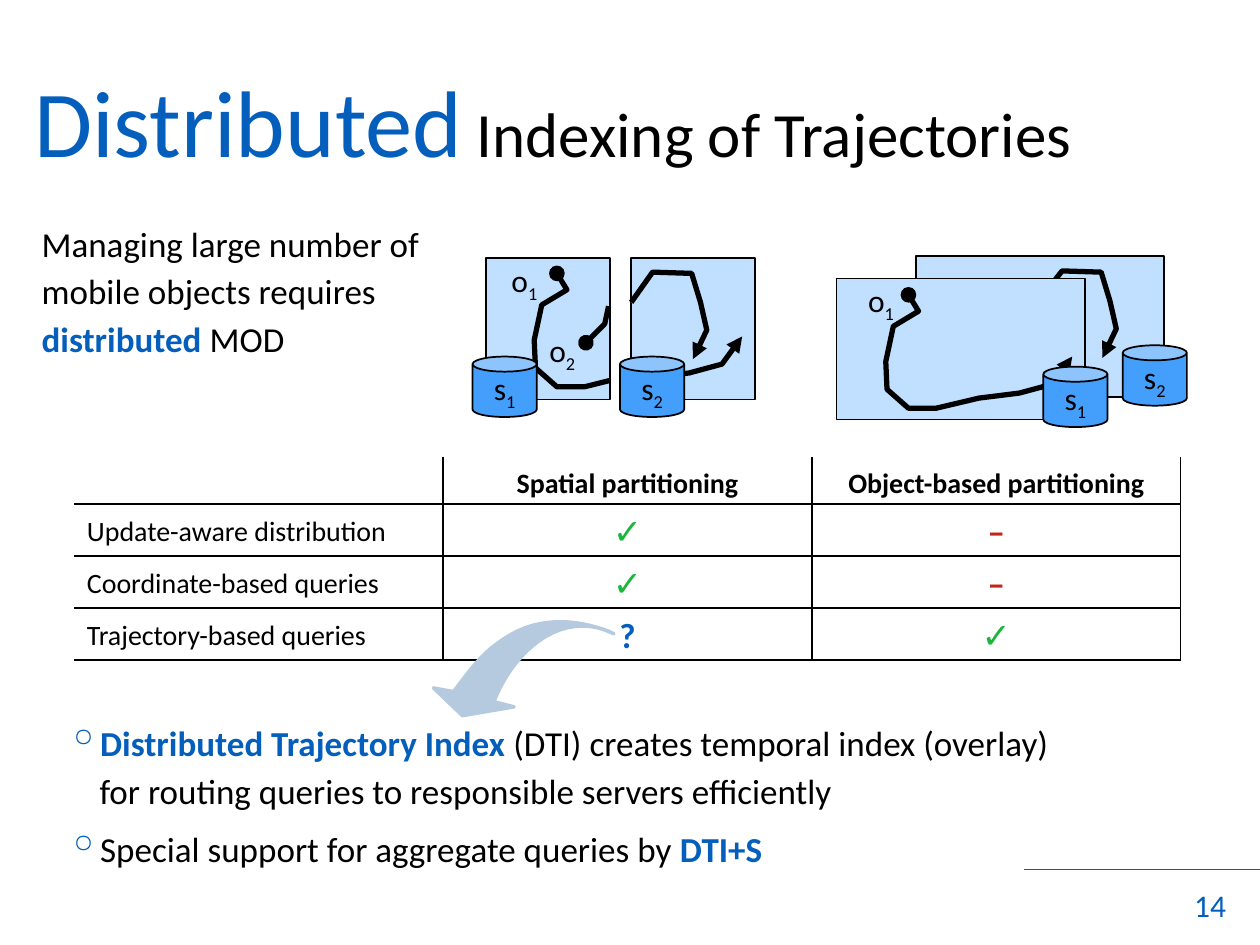
from dataclasses import dataclass

from lxml import etree
from pptx import Presentation
from pptx import util as u
from pptx.dml.color import RGBColor
from pptx.enum import shapes, text
from pptx.oxml import ns

# The slide is a grid of 100 columns by 75 rows; all lengths are in cells.
COLUMNS, ROWS = 100, 75
CELL = u.Inches(0.1)
FONT = "Calibri"
COLORS = {"accent": "045EBC", "ink": "000000", "area": "C1DFFE", "server": "449EFB",
          "yes": "1CB63D", "no": "C72418", "swoosh": "B5CADE"}
ALIGN, ANCHOR = text.PP_ALIGN, text.MSO_ANCHOR
Point = tuple[float, float]


@dataclass
class Span:
    words: str
    size: float = 20
    color: str = "ink"
    bold: bool = False
    subscript: bool = False


@dataclass
class Server:
    left: float
    top: float
    number: str


@dataclass
class Trajectory:
    points: list[Point]
    head: str = "none"
    tail: str = "none"


@dataclass
class Area:
    left: float
    top: float
    width: float
    trajectories: list[Trajectory]
    labels: list[tuple[float, float, str]]


def cells(*lengths: float) -> list[int]:
    return [round(length * CELL) for length in lengths]


def rgb(name: str) -> RGBColor:
    return RGBColor.from_string(COLORS[name])


def add_xml(parent, tag: str, **attributes: str):
    return etree.SubElement(parent, ns.qn(tag), attributes)


def write(frame, paragraphs: list[list[Span]], align=ALIGN.LEFT, anchor=ANCHOR.TOP,
          insets=(0, 0, 0, 0), wrap=True, spacing=1.0, before=0.0, margin=0.0, bullet="") -> None:
    """Fill a text frame; margin is in cells, insets are left, top, right, bottom."""
    frame.word_wrap, frame.vertical_anchor = wrap, anchor
    (frame.margin_left, frame.margin_top,
     frame.margin_right, frame.margin_bottom) = cells(*insets)
    for index, spans in enumerate(paragraphs):
        para = frame.add_paragraph() if index else frame.paragraphs[0]
        para.alignment, para.line_spacing, para.space_before = align, spacing, u.Pt(before)
        properties = para._p.get_or_add_pPr()
        properties.set("marL", str(cells(margin)[0]))
        if bullet:
            properties.set("indent", str(cells(-2.6)[0]))
            add_xml(add_xml(properties, "a:buClr"), "a:srgbClr", val=COLORS["accent"])
            add_xml(properties, "a:buSzPct", val="120000")
            add_xml(properties, "a:buChar", char=bullet)
        for span in spans:
            for line, words in enumerate(span.words.split("\n")):
                if line:
                    para.add_line_break()
                if not words:
                    continue
                run = para.add_run()
                run.text = words
                run.font.name, run.font.size, run.font.bold = FONT, u.Pt(span.size), span.bold
                run.font.color.rgb = rgb(span.color)
                if span.subscript:
                    run._r.get_or_add_rPr().set("baseline", "-25000")


def add_text(page, place: tuple, paragraphs: list[list[Span]], **style) -> None:
    write(page.shapes.add_textbox(*cells(*place)).text_frame, paragraphs, **style)


def paint(shape, fill: str, line: str = "", width: float = 1) -> None:
    shape.shadow.inherit = False
    shape.fill.solid()
    shape.fill.fore_color.rgb = rgb(fill)
    if line:
        shape.line.color.rgb, shape.line.width = rgb(line), u.Pt(width)
    else:
        shape.line.fill.background()


def indexed(letter: str, number: str) -> list[list[Span]]:
    return [[Span(letter, 18), Span(number, 18, subscript=True)]]


def add_outline(page, points: list[Point], close: bool):
    start, *rest = [cells(*point) for point in points]
    builder = page.shapes.build_freeform(*start)
    builder.add_line_segments(rest, close=close)
    return builder.convert_to_shape()


def add_trajectory(page, route: Trajectory) -> None:
    outline = add_outline(page, route.points, close=False)
    paint(outline, "area", "ink", 3)
    line = outline.line._get_or_add_ln()
    add_xml(line, "a:headEnd", type=route.head)
    add_xml(line, "a:tailEnd", type=route.tail)


def add_area(page, area: Area) -> None:
    place = cells(area.left, area.top, area.width, 11.2)
    paint(page.shapes.add_shape(shapes.MSO_SHAPE.RECTANGLE, *place), "area", "ink")
    for route in area.trajectories:
        add_trajectory(page, route)
    for left, top, number in area.labels:
        label = page.shapes.add_shape(shapes.MSO_SHAPE.RECTANGLE, *cells(left, top, 2.3, 3))
        paint(label, "area")
        write(label.text_frame, indexed("o", number), wrap=False)


def add_server(page, server: Server) -> None:
    can = page.shapes.add_shape(shapes.MSO_SHAPE.CAN, *cells(server.left, server.top, 5.1, 4.8))
    can.adjustments[0] = 0.25
    paint(can, "server", "ink")
    write(can.text_frame, indexed("s", server.number), align=ALIGN.CENTER,
          anchor=ANCHOR.MIDDLE, insets=(0.6, 0, 0.6, 0))


def shifted(points: list[Point], right: float, down: float) -> list[Point]:
    return [(x + right, y + down) for x, y in points]


def curve(p0: Point, p1: Point, p2: Point, p3: Point, steps: int = 16) -> list[Point]:
    """Points along a cubic Bezier curve, without its start."""
    shares = [step / steps for step in range(1, steps + 1)]
    return [tuple((1 - t) ** 3 * a + 3 * t * (1 - t) ** 2 * b + 3 * t * t * (1 - t) * c + t ** 3 * d
                  for a, b, c, d in zip(p0, p1, p2, p3)) for t in shares]


def add_swoosh(page) -> None:
    tip, neck, inner, turn = (48.7, 50.3), (39.2, 55.7), (36, 54.9), (40.3, 50.5)
    points = [tip, *curve(tip, (49, 50.5), (46, 48.4), (42.6, 51)),
              *curve((42.6, 51), (40.5, 52.6), (39.5, 54.9), neck),
              (40.8, 56.1), (36.7, 56.8), (34.4, 54.6), inner,
              *curve(inner, (38, 52.2), (38.6, 51.6), turn),
              *curve(turn, (44, 48.2), (48.1, 50), tip)]
    paint(add_outline(page, points, close=True), "swoosh", "swoosh", 2)


def set_borders(cell, sides: str) -> None:
    properties = cell._tc.get_or_add_tcPr()
    for side in "LRTB":
        line = add_xml(properties, f"a:ln{side}", w=str(u.Pt(1)))
        if side in sides:
            add_xml(add_xml(line, "a:solidFill"), "a:srgbClr", val=COLORS["ink"])
        else:
            add_xml(line, "a:noFill")
    add_xml(properties, "a:noFill")


def add_comparison(page) -> None:
    yes, no = Span("✓", 20, "yes", True), Span("–", 20, "no", True)
    unknown = Span("?", 20, "accent", True)
    rows = [[None, *(Span(f"{kind} partitioning", 16, bold=True)
                     for kind in ("Spatial", "Object-based"))],
            [Span("Update-aware distribution", 16), yes, no],
            [Span("Coordinate-based queries", 16), yes, no],
            [Span("Trajectory-based queries", 16), unknown, yes]]
    table = page.shapes.add_table(len(rows), 3, *cells(5.9, 36.3, 87.8, 16.1)).table
    table.first_row = table.horz_banding = False
    for column in table.columns:
        column.width = cells(29.27)[0]
    for r, row in enumerate(rows):
        table.rows[r].height = cells(4.13 if r else 3.7)[0]
        for c, span in enumerate(row):
            cell = table.cell(r, c)
            write(cell.text_frame, [[span]] if span else [], spacing=1.1,
                  align=ALIGN.CENTER if c else ALIGN.LEFT)
            cell.vertical_anchor = ANCHOR.MIDDLE if r else ANCHOR.BOTTOM
            margins = (0.4, 0.2) if c or not r else (1, 0.5)
            cell.margin_left, cell.margin_top = cell.margin_right, cell.margin_bottom = cells(*margins)
            set_borders(cell, ("L" if c else "") + ("T" if r else "") + "RB")


def add_partitionings(page) -> None:
    first = [(42.4, 21.7), (45, 23), (43, 24.2), (42.4, 27), (42.5, 29.2), (42.4, 30.7), (46.4, 30.7)]
    first[5] = (44.2, 30.7)
    last = [(51.5, 30), (54.7, 29.6), (57.3, 28.9), (58.9, 26.7)]
    second = [(51.8, 21.6), (54.9, 21.7), (55.6, 24), (56.1, 26.2), (55, 28.5)]
    first[0] = (44.2, 21.7)
    areas = [
        Area(72.7, 20.3, 19.7, [Trajectory([(80.6, 27.2), (82.1, 25.7), (82.5, 23.8),
                                            *shifted(second, 32.5, -0.1)], "oval", "triangle")], []),
        Area(66.4, 22.1, 19.7, [Trajectory(shifted(first, 27.9, 1.7) + shifted(last, 26.2, 1.6),
                                           "oval", "triangle")], [(68.9, 22.3, "1")]),
        Area(50.1, 20.5, 9.8, [Trajectory([(50, 30.2), *last], tail="triangle"),
                               Trajectory([(50.1, 24), *second], tail="triangle")], []),
        Area(38.6, 20.5, 9.8, [Trajectory([*first, (48.4, 30.2)], "oval"),
                               Trajectory([(46.5, 27.2), (48, 25.7), (48.3, 24.3)], "oval")],
             [(40.6, 20.7, "1"), (43.6, 26.3, "2")])]
    for area in areas:
        add_area(page, area)
    for server in (Server(49.2, 28.3, "2"), Server(37.5, 28.3, "1"),
                   Server(82.8, 29.1, "1"), Server(89.1, 27.4, "2")):
        add_server(page, server)


def main() -> None:
    deck = Presentation()
    deck.slide_width, deck.slide_height = cells(COLUMNS, ROWS)
    page = deck.slides.add_slide(deck.slide_layouts[6])
    rule = page.shapes.add_connector(shapes.MSO_CONNECTOR.STRAIGHT, *cells(COLUMNS, 69, 81.3, 69))
    rule.line.color.rgb, rule.line.width = rgb("accent"), u.Pt(1)
    add_xml(rule._element.spPr, "a:effectLst")
    add_text(page, (89.1, 68.8, 8.2, 5), [[Span("14", 18, "accent")]], align=ALIGN.RIGHT,
             anchor=ANCHOR.BOTTOM, insets=(0, 0.5, 0, 0.5))
    add_text(page, (2.7, 5, 94.5, 11.2),
             [[Span("Distributed", 54, "accent"), Span(" Indexing of Trajectories", 36)]])
    add_text(page, (0.9, 17.2, 65.5, 12.5),
             [[Span("Managing large number of\nmobile objects requires\n"),
               Span("distributed ", color="accent", bold=True), Span("MOD")]],
             spacing=1.13, margin=2.4)
    add_text(page, (0.9, 52.5, 96.4, 16.5),
             [[Span("Distributed Trajectory Index ", color="accent", bold=True),
               Span("(DTI) creates temporal index (overlay)\n"
                    "for routing queries to responsible servers efficiently")],
              [Span("Special support for aggregate queries by "),
               Span("DTI+S", color="accent", bold=True)]],
             anchor=ANCHOR.BOTTOM, spacing=1.13, before=6, margin=7, bullet="◦")
    add_partitionings(page)
    add_comparison(page)
    add_swoosh(page)
    deck.save("out.pptx")


if __name__ == "__main__":
    main()
